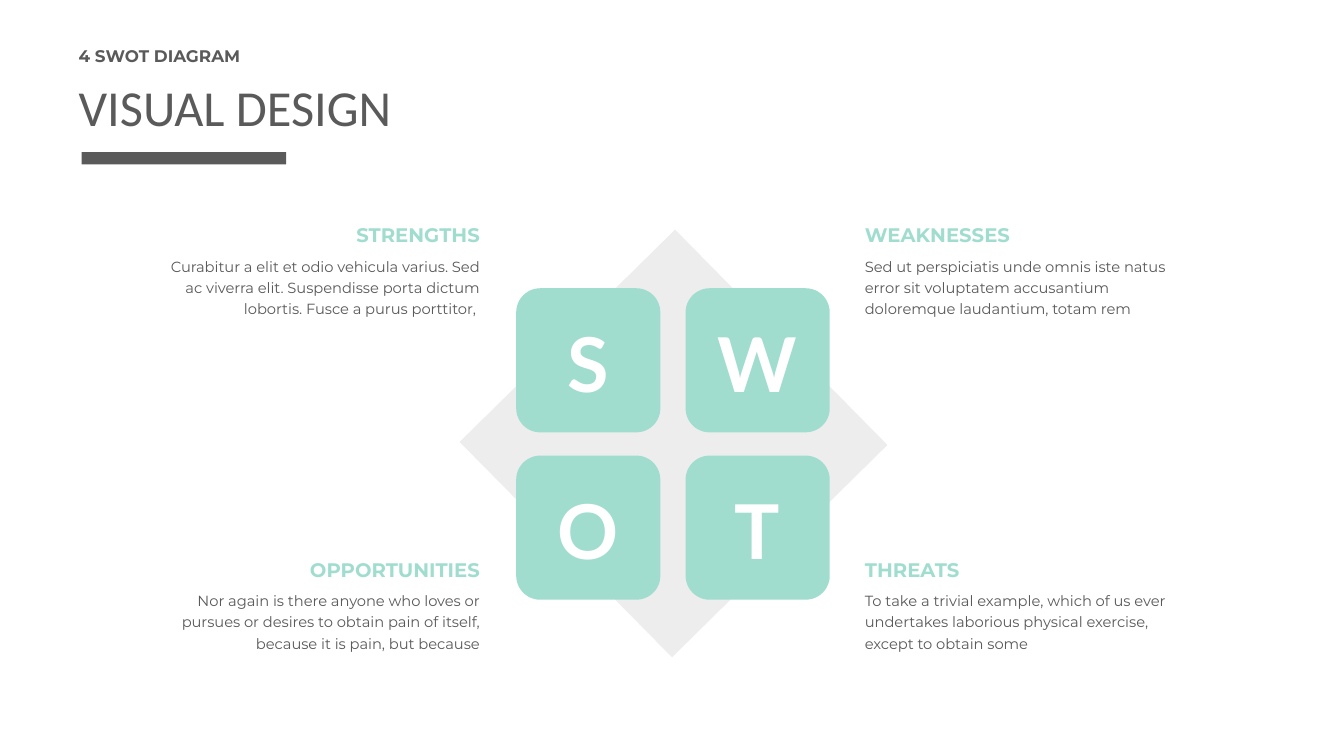
from pptx import Presentation
from pptx.dml.color import RGBColor
from pptx.enum import shapes, text
from pptx.util import Inches, Pt

# Content: letter, heading, description, column, row
TITLE = "VISUAL DESIGN"
SUBTITLE = "4 SWOT DIAGRAM"
QUADRANTS = [
    ("S", "STRENGTHS", "Curabitur a elit et odio vehicula varius. Sed ac viverra elit. "
     "Suspendisse porta dictum lobortis. Fusce a purus porttitor, ", 0, 0),
    ("O", "OPPORTUNITIES", "Nor again is there anyone who loves or pursues or desires to "
     "obtain pain of itself, because it is pain, but because", 0, 1),
    ("W", "WEAKNESSES", "Sed ut perspiciatis unde omnis iste natus error sit voluptatem "
     "accusantium doloremque laudantium, totam rem", 1, 0),
    ("T", "THREATS", "To take a trivial example, which of us ever undertakes laborious "
     "physical exercise, except to obtain some", 1, 1),
]

# Style and grid, in inches
GREY, MINT, PALE, WHITE = "5A5A5A", "A0DDCF", "EDEDED", "FFFFFF"
MARGIN, HEADER_WIDTH = 0.68, 11.97
TILE, TILE_STEP = 1.43, 1.68
TILE_LEFT, TILE_TOP = 5.12, 2.86
TEXT_WIDTH, TEXT_LEFT, TEXT_STEP = 3.36, 1.5, 6.98
HEADING_TOP, ROW_STEP, BODY_DROP = 2.17, 3.32, 0.31
ALIGN = text.PP_ALIGN
ANCHOR = text.MSO_ANCHOR


def color(value):
    return RGBColor.from_string(value)


def place(shape, left, top, width, height):
    shape.left, shape.top = Inches(left), Inches(top)
    shape.width, shape.height = Inches(width), Inches(height)


def write(shape, words, size, font, ink, bold=False, align=ALIGN.LEFT,
          anchor=ANCHOR.TOP, insets=(0.04, 0.05), spacing=1.0):
    frame = shape.text_frame
    frame.word_wrap = True
    frame.auto_size = text.MSO_AUTO_SIZE.NONE
    frame.vertical_anchor = anchor
    frame.margin_left = frame.margin_right = Inches(0.1)
    frame.margin_top, frame.margin_bottom = map(Inches, insets)
    para = frame.paragraphs[0]
    para.alignment = align
    para.line_spacing = spacing
    para.space_before = Pt(0)
    span = para.add_run()
    span.text = words
    span.font.size, span.font.name, span.font.bold = Pt(size), font, bold
    span.font.color.rgb = color(ink)


def add_block(page, kind, left, top, width, height, fill):
    block = page.shapes.add_shape(kind, *map(Inches, (left, top, width, height)))
    block.shadow.inherit = False
    block.fill.solid()
    block.fill.fore_color.rgb = color(fill)
    block.line.fill.background()
    return block


def add_text(page, left, top, height, words, **style):
    box = page.shapes.add_textbox(*map(Inches, (left, top, TEXT_WIDTH, height)))
    write(box, words, font="Montserrat", **style)


def build():
    deck = Presentation()
    deck.slide_width, deck.slide_height = Inches(13.33), Inches(7.5)
    page = deck.slides.add_slide(deck.slide_layouts.get_by_name("Section Header"))

    # Header
    title, subtitle = page.placeholders
    place(title, MARGIN, 0.71, HEADER_WIDTH, 0.7)
    write(title, TITLE, 36, "Calibri", GREY, anchor=ANCHOR.MIDDLE, insets=(0.05, 0.05))
    place(subtitle, MARGIN, 0.4, HEADER_WIDTH, 0.34)
    write(subtitle, SUBTITLE, 12, "Montserrat", GREY, bold=True, insets=(0.05, 0.05))
    add_block(page, shapes.MSO_SHAPE.RECTANGLE, 0.81, 1.51, 2.03, 0.12, GREY)

    # Diamond behind the tiles
    diamond = add_block(page, shapes.MSO_SHAPE.RECTANGLE, 5.18, 2.9, 3, 3, PALE)
    diamond.rotation = 45.4

    # Lettered tiles with their texts on the outer side
    for letter, heading, body, column, row in QUADRANTS:
        tile = add_block(page, shapes.MSO_SHAPE.ROUNDED_RECTANGLE,
                         TILE_LEFT + column * TILE_STEP, TILE_TOP + row * 1.66,
                         TILE, TILE, MINT)
        write(tile, letter, 54, "Lato", WHITE, bold=True, align=ALIGN.CENTER,
              anchor=ANCHOR.MIDDLE, insets=(0.08, 0.05))

        left = TEXT_LEFT + column * TEXT_STEP
        top = HEADING_TOP + row * ROW_STEP
        align = ALIGN.LEFT if column else ALIGN.RIGHT
        add_text(page, left, top + BODY_DROP, 0.84, body,
                 size=10.5, ink=GREY, align=align, spacing=1.2)
        add_text(page, left, top, 0.41, heading,
                 size=14, ink=MINT, bold=True, align=align)

    deck.save("out.pptx")


if __name__ == "__main__":
    build()
